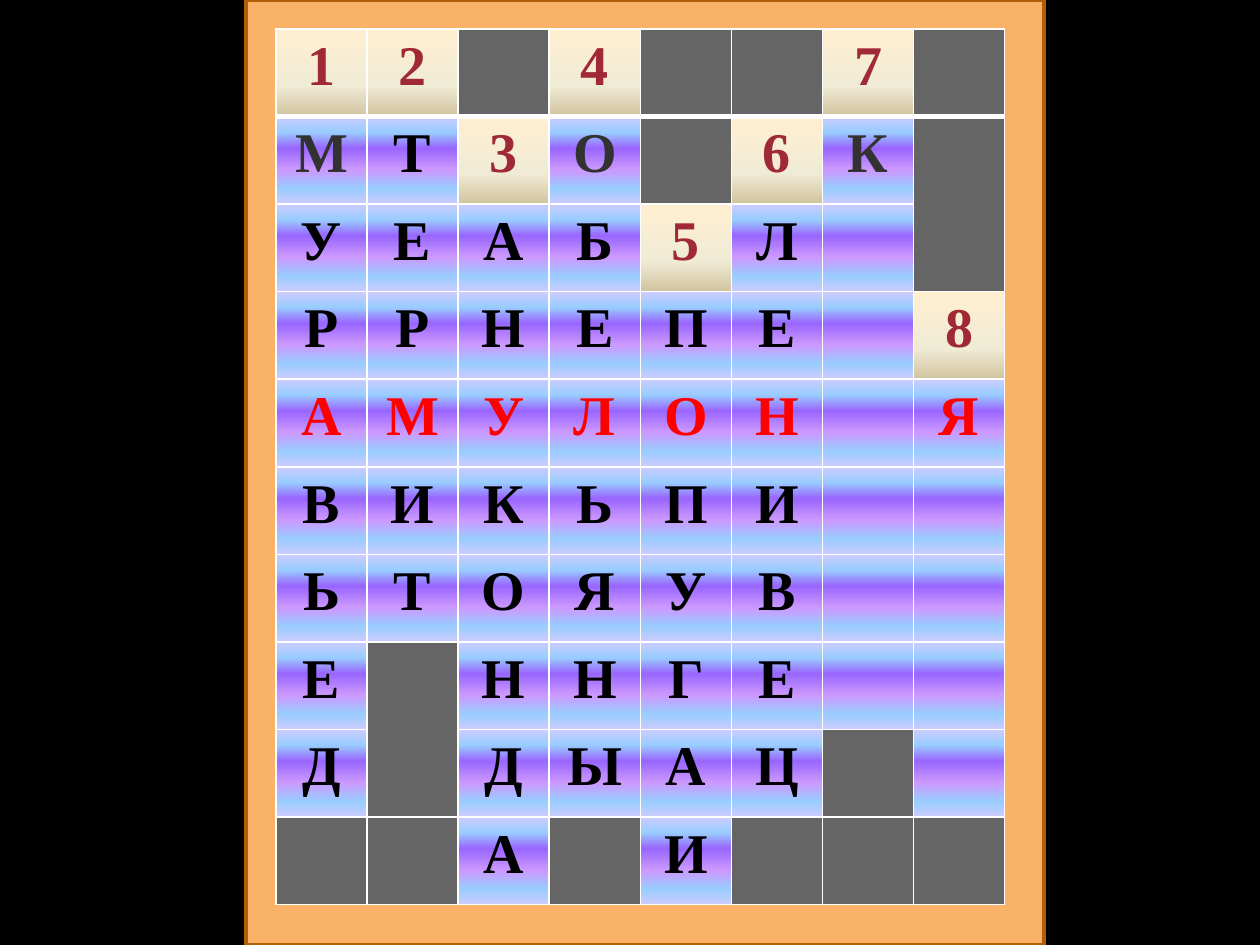
from lxml import etree
from pptx import Presentation, util as u
from pptx.dml.color import RGBColor
from pptx.enum import shapes, text
from pptx.oxml.ns import qn

PX = 914400 / 126
C = {"back": "000000", "frame": "F9B268", "edge": "B25E07", "block": "656565",
     "line": "FFFFFF", "number": "9F2936", "letter": "000000",
     "key": "FF0000", "first": "323232"}
NUMBER_STOPS = [(0, "FFEFD1"), (65, "F0EBD5"), (100, "D1C39F")]
LETTER_STOPS = [(0, "CCCCFF"), (18, "99CCFF"), (36, "9966FF"),
                (61, "CC99FF"), (82, "99CCFF"), (100, "CCCCFF")]

# "#" is a blocked square, "." an unsolved one
GRID = ["12#4##7#",
        "МТ3О#6К#",
        "УЕАБ5Л.#",
        "РРНЕПЕ.8",
        "АМУЛОН.Я",
        "ВИКЬПИ..",
        "ЬТОЯУВ..",
        "Е#ННГЕ..",
        "Д#ДЫАЦ#.",
        "##А#И###"]
KEY_ROW = 4
FIRST_LETTERS = [(1, 0), (1, 3), (1, 6)]


def px(n):
    return u.Emu(round(n * PX))


def add_color(parent, color):
    etree.SubElement(parent, qn("a:srgbClr"), val=color)


prs = Presentation()
prs.slide_width, prs.slide_height = px(1260), px(945)
s = prs.slides.add_slide(prs.slide_layouts[6])
s.background.fill.solid()
s.background.fill.fore_color.rgb = RGBColor.from_string(C["back"])

sp = s.shapes.add_shape(shapes.MSO_SHAPE.FLOWCHART_PROCESS,
                        px(246), px(0), px(798), px(945))
sp.shadow.inherit = False
sp.fill.solid()
sp.fill.fore_color.rgb = RGBColor.from_string(C["frame"])
sp.line.color.rgb = RGBColor.from_string(C["edge"])
sp.line.width = u.Pt(2)

tbl = s.shapes.add_table(len(GRID), len(GRID[0]),
                         px(276), px(29), px(729), px(876)).table
tbl.first_row = tbl.horz_banding = False

for i, row in enumerate(GRID):
    for j, mark in enumerate(row):
        cell = tbl.cell(i, j)
        tcPr = cell._tc.get_or_add_tcPr()
        for side in ("L", "R", "T", "B"):
            under_top_row = (i, side) in ((0, "B"), (1, "T"))
            ln = etree.SubElement(tcPr, qn(f"a:ln{side}"),
                                  w=str(u.Pt(3 if under_top_row else 1)))
            add_color(etree.SubElement(ln, qn("a:solidFill")), C["line"])

        if mark == "#":
            cell.fill.solid()
            cell.fill.fore_color.rgb = RGBColor.from_string(C["block"])
            continue

        grad = etree.SubElement(tcPr, qn("a:gradFill"), rotWithShape="1")
        stops = etree.SubElement(grad, qn("a:gsLst"))
        for pos, color in NUMBER_STOPS if mark.isdigit() else LETTER_STOPS:
            add_color(etree.SubElement(stops, qn("a:gs"), pos=str(pos * 1000)), color)
        etree.SubElement(grad, qn("a:lin"), ang="5400000", scaled="0")
        if mark == ".":
            continue

        if mark.isdigit():
            color = C["number"]
        elif i == KEY_ROW:
            color = C["key"]
        else:
            color = C["first" if (i, j) in FIRST_LETTERS else "letter"]
        p = cell.text_frame.paragraphs[0]
        p.alignment = text.PP_ALIGN.CENTER
        r = p.add_run()
        r.text = mark
        r.font.name = "Times New Roman"
        r.font.size = u.Pt(32)
        r.font.bold = True
        r.font.color.rgb = RGBColor.from_string(color)

for i, j in ((1, 7), (7, 1)):
    tbl.cell(i, j).merge(tbl.cell(i + 1, j))

prs.save("out.pptx")
